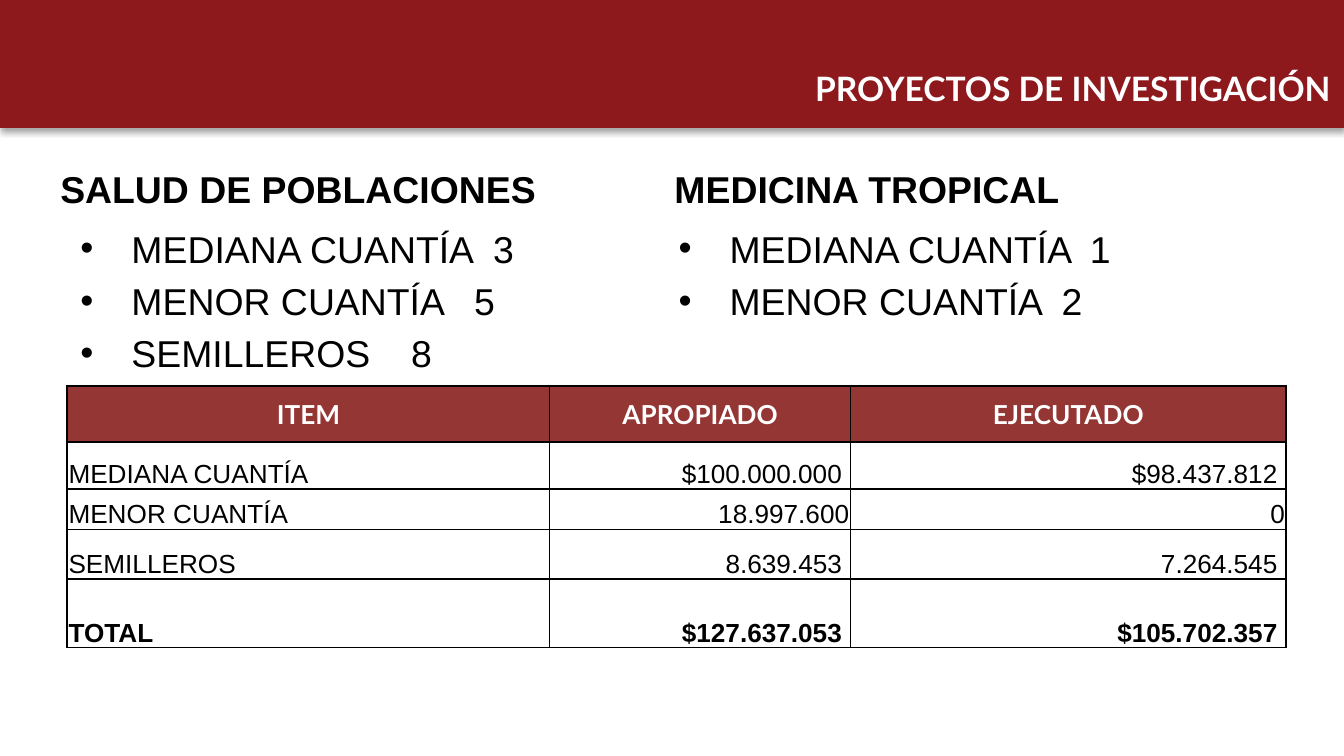
from lxml.etree import SubElement
from pptx import Presentation
from pptx.dml.color import RGBColor
from pptx.enum.shapes import MSO_SHAPE
from pptx.enum.text import MSO_ANCHOR, PP_ALIGN
from pptx.oxml import parse_xml
from pptx.oxml.ns import nsdecls, qn
from pptx.util import Inches, Pt

COLORS = {"banner": "8D191D", "header": "943634", "ink": "000000", "paper": "FFFFFF"}
TITLE = {"name": "Lato", "size": Pt(18), "bold": True}
HEADING = {"name": "Arial", "size": Pt(20), "bold": True}
BULLET = {"name": "Arial", "size": Pt(20), "bold": False}
HEADER = {"name": "Lato", "size": Pt(14), "bold": True}
AMOUNT = {"name": "Arial", "size": Pt(14), "bold": False}
TOTAL = {**AMOUNT, "bold": True}

PROGRAMS = [
    ("SALUD DE POBLACIONES", 0.35, 0.5,
     [("MEDIANA CUANTÍA", "3", 3.07), ("MENOR CUANTÍA", "5", 2.93), ("SEMILLEROS", "8", 2.46)]),
    ("MEDICINA TROPICAL", 4.92, 4.95,
     [("MEDIANA CUANTÍA", "1", 3.06), ("MENOR CUANTÍA", "2", 2.85)]),
]
BUDGET = [
    ("ITEM", "APROPIADO", "EJECUTADO"),
    ("MEDIANA CUANTÍA", "$100.000.000 ", "$98.437.812 "),
    ("MENOR CUANTÍA", "18.997.600", "0"),
    ("SEMILLEROS", "8.639.453 ", "7.264.545 "),
    ("TOTAL", "$127.637.053 ", "$105.702.357 "),
]
COLUMN_WIDTHS = [3.59, 2.24, 3.24]
ROW_HEIGHTS = [0.42, 0.35, 0.3, 0.37, 0.51]


def rgb(role):
    return RGBColor.from_string(COLORS[role])


def apply(target, values):
    for name, value in values.items():
        setattr(target, name, value)


def write(paragraph, text, style, color="ink", align=PP_ALIGN.LEFT):
    paragraph.alignment = align
    run = paragraph.add_run()
    run.text = text
    apply(run.font, style)
    run.font.color.rgb = rgb(color)


def add_frame(slide, box, **values):
    frame = slide.shapes.add_textbox(*map(Inches, box)).text_frame
    apply(frame, {"word_wrap": True, **values})
    return frame


def add_banner(slide, left, top, width, height):
    banner = slide.shapes.add_shape(
        MSO_SHAPE.RECTANGLE, *map(Inches, (left, top, width, height)))
    banner.shadow.inherit = False
    banner.fill.solid()
    banner.fill.fore_color.rgb = banner.line.color.rgb = rgb("banner")
    banner.line.width = Pt(0.75)
    effects = banner.element.spPr.find(qn("a:effectLst"))
    effects.append(parse_xml(
        f'<a:outerShdw {nsdecls("a")} blurRad="{Pt(3.1)}" dist="{Pt(1.8)}" dir="5400000" '
        f'rotWithShape="0"><a:srgbClr val="{COLORS["ink"]}"><a:alpha val="35000"/>'
        '</a:srgbClr></a:outerShdw>'))
    title = add_frame(slide, (left + 2.27, top + 0.37, width - 2.27, 0.57),
                      vertical_anchor=MSO_ANCHOR.MIDDLE)
    write(title.paragraphs[0], "PROYECTOS DE INVESTIGACIÓN", TITLE, "paper", PP_ALIGN.RIGHT)


def add_bullet(paragraph, stop):
    properties = paragraph._p.get_or_add_pPr()
    hanging = {"marL": Inches(0.38), "indent": -Inches(0.38)}
    for name, value in hanging.items():
        properties.set(name, str(value))
    SubElement(properties, qn("a:buFont"), typeface="Arial")
    SubElement(properties, qn("a:buChar"), char="•")
    tabs = SubElement(properties, qn("a:tabLst"))
    SubElement(tabs, qn("a:tab"), pos=str(Inches(stop)), algn="l")


def add_program(slide, left, top, width, heading, list_left, projects):
    label = add_frame(slide, (left, top, width, 0.52), vertical_anchor=MSO_ANCHOR.BOTTOM)
    write(label.paragraphs[0], heading, HEADING)
    listing = add_frame(slide, (list_left, top + 0.52, width, 0.62 + 0.36 * len(projects)),
                        margin_top=Inches(0.06))
    for index, (project, count, stop) in enumerate(projects):
        paragraph = listing.add_paragraph() if index else listing.paragraphs[0]
        add_bullet(paragraph, stop)
        if index:
            paragraph.space_before = Pt(4)
        write(paragraph, f"{project}\t{count}", BULLET)


def add_borders(cell):
    properties = cell._tc.get_or_add_tcPr()
    for position, side in enumerate(("lnL", "lnR", "lnT", "lnB")):
        properties.insert(position, parse_xml(
            f'<a:{side} {nsdecls("a")} w="{Pt(1)}"><a:solidFill>'
            f'<a:srgbClr val="{COLORS["ink"]}"/></a:solidFill></a:{side}>'))


def add_budget(slide, left, top):
    table = slide.shapes.add_table(
        len(BUDGET), len(COLUMN_WIDTHS), Inches(left), Inches(top),
        Inches(sum(COLUMN_WIDTHS)), Inches(sum(ROW_HEIGHTS))).table
    apply(table, {"first_row": False, "horz_banding": False})
    for column, width in zip(table.columns, COLUMN_WIDTHS):
        column.width = Inches(width)
    for index, (row, height, values) in enumerate(zip(table.rows, ROW_HEIGHTS, BUDGET)):
        row.height = Inches(height)
        is_header = index == 0
        style = HEADER if is_header else TOTAL if index == len(BUDGET) - 1 else AMOUNT
        for position, (cell, value) in enumerate(zip(row.cells, values)):
            apply(cell, {
                "margin_left": Inches(0.01), "margin_top": Inches(0.01),
                "margin_right": Inches(0.01), "margin_bottom": 0,
                "vertical_anchor": MSO_ANCHOR.MIDDLE if is_header else MSO_ANCHOR.BOTTOM})
            if is_header:
                cell.fill.solid()
                cell.fill.fore_color.rgb = rgb("header")
                align = PP_ALIGN.CENTER
            else:
                cell.fill.background()
                align = PP_ALIGN.RIGHT if position else PP_ALIGN.LEFT
            add_borders(cell)
            write(cell.text_frame.paragraphs[0], value, style,
                  "paper" if is_header else "ink", align)


def main():
    deck = Presentation()
    apply(deck, {"slide_width": Inches(10), "slide_height": Inches(10) * 9 // 16})
    slide = deck.slides.add_slide(deck.slide_layouts[6])
    add_banner(slide, 0, 0, 10, 0.95)
    for heading, left, list_left, projects in PROGRAMS:
        add_program(slide, left, 1.1, 4.42, heading, list_left, projects)
    add_budget(slide, 0.5, 2.87)
    deck.save("out.pptx")


if __name__ == "__main__":
    main()
